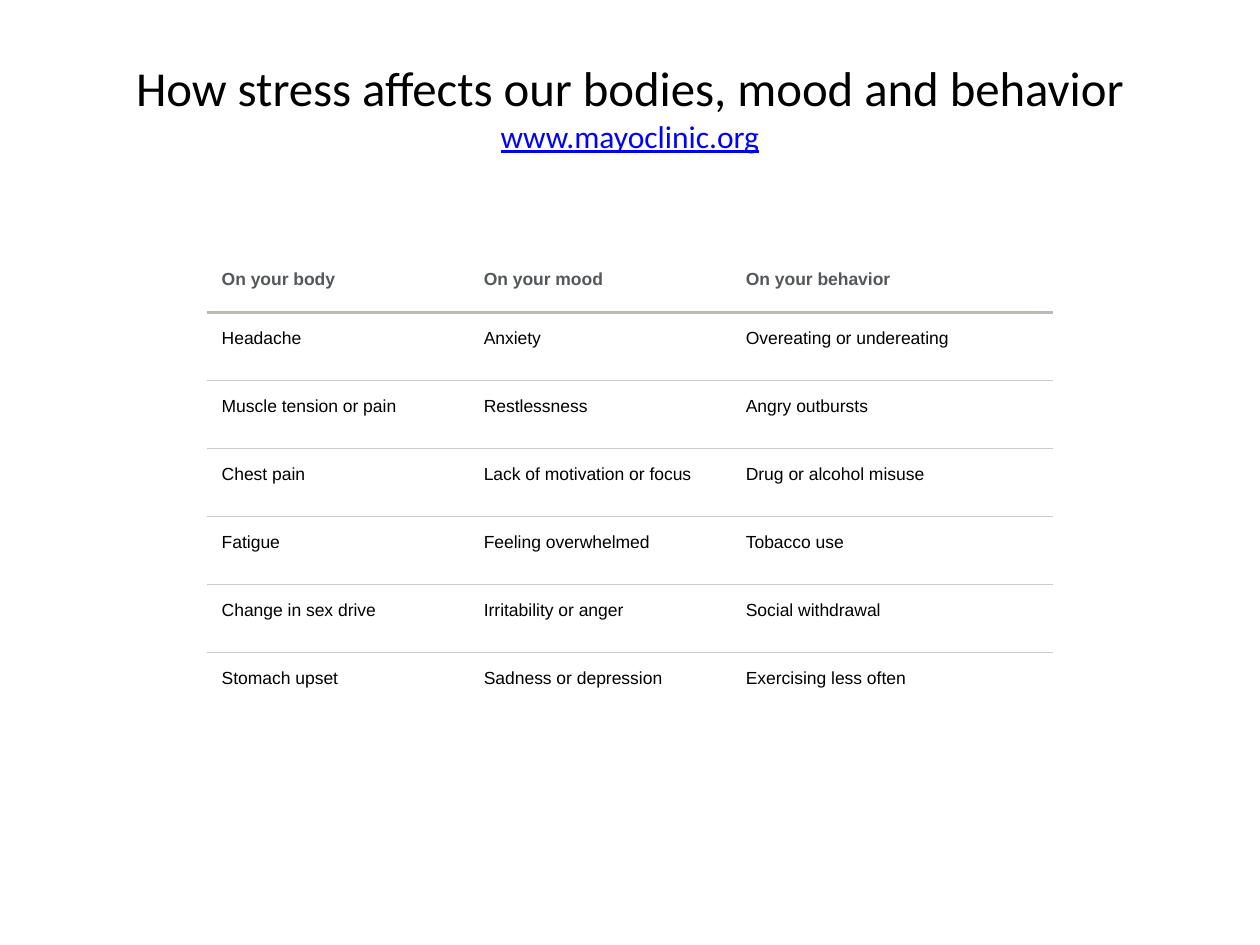
from dataclasses import dataclass

from lxml import etree
from pptx import Presentation
from pptx import util as u
from pptx.dml.color import RGBColor
from pptx.enum import text
from pptx.oxml.ns import qn


@dataclass(frozen=True)
class Theme:
    title: dict
    link: dict
    head: dict
    body: dict
    head_rule: tuple = ("BABBB1", 2.25)
    row_rule: tuple = ("CCCCCC", 1)
    paper: str = "FFFFFF"


THEME = Theme(
    title=dict(name="Calibri", size=27.9, color="000000"),
    link=dict(name="Calibri", size=18, color="0000FF", underline=True),
    head=dict(name="Arial", size=10, color="54585A", bold=True),
    body=dict(name="Arial", size=10, color="000000", bold=False),
)

HEADING = [("How stress affects our bodies, mood and behavior", THEME.title),
           ("www.mayoclinic.org", THEME.link)]
EFFECTS = [
    ("On your body", "On your mood", "On your behavior"),
    ("Headache", "Anxiety", "Overeating or undereating"),
    ("Muscle tension or pain", "Restlessness", "Angry outbursts"),
    ("Chest pain", "Lack of motivation or focus", "Drug or alcohol misuse"),
    ("Fatigue", "Feeling overwhelmed", "Tobacco use"),
    ("Change in sex drive", "Irritability or anger", "Social withdrawal"),
    ("Stomach upset", "Sadness or depression", "Exercising less often"),
]
COLUMN_WIDTHS = (2.08, 2.08, 2.56)


def write(p, words, style):
    r = p.add_run()
    r.text = words
    for key, value in style.items():
        if key == "color":
            r.font.color.rgb = RGBColor.from_string(value)
        else:
            setattr(r.font, key, u.Pt(value) if key == "size" else value)


def set_borders(cell, **rules):
    """Draw the given sides as (colour, points); clear the others."""
    tc_pr = cell._tc.get_or_add_tcPr()
    for i, side in enumerate(("lnL", "lnR", "lnT", "lnB")):
        ln = etree.Element(qn(f"a:{side}"))
        rule = rules.get(side)
        if rule:
            ln.set("w", str(int(u.Pt(rule[1]))))
            fill = etree.SubElement(ln, qn("a:solidFill"))
            etree.SubElement(fill, qn("a:srgbClr"), val=rule[0])
        else:
            etree.SubElement(ln, qn("a:noFill"))
        tc_pr.insert(i, ln)


def add_heading(s, left, top, width, height):
    tf = s.shapes.add_textbox(*map(u.Inches, (left, top, width, height))).text_frame
    for key, value in dict(word_wrap=True, margin_top=u.Inches(0.16),
                           vertical_anchor=text.MSO_ANCHOR.TOP).items():
        setattr(tf, key, value)
    for i, (words, style) in enumerate(HEADING):
        p = tf.add_paragraph() if i else tf.paragraphs[0]
        p.alignment = text.PP_ALIGN.CENTER
        write(p, words, style)


def add_effects_table(s, left, top, width, height):
    rows, cols = len(EFFECTS), len(COLUMN_WIDTHS)
    table = s.shapes.add_table(
        rows, cols, *map(u.Inches, (left, top, width, height))).table
    table.first_row = table.horz_banding = False
    for column, share in zip(table.columns, COLUMN_WIDTHS):
        column.width = u.Inches(width * share / sum(COLUMN_WIDTHS))

    # A rule below each row but the last, heavier under the header
    rules = [None, THEME.head_rule] + [THEME.row_rule] * (rows - 2) + [None]
    for i, entries in enumerate(EFFECTS):
        header = i == 0
        for j, words in enumerate(entries):
            cell = table.cell(i, j)
            for side in ("left", "right", "top", "bottom"):
                setattr(cell, f"margin_{side}", u.Inches(0.12))
            cell.vertical_anchor = (text.MSO_ANCHOR.MIDDLE if header
                                    else text.MSO_ANCHOR.TOP)
            if header:
                cell.fill.solid()
                cell.fill.fore_color.rgb = RGBColor.from_string(THEME.paper)
            else:
                cell.fill.background()
            set_borders(cell, lnT=rules[i], lnB=rules[i + 1])
            p = cell.text_frame.paragraphs[0]
            p.line_spacing = 1.07
            write(p, words, THEME.head if header else THEME.body)


def main():
    prs = Presentation()
    prs.slide_width, prs.slide_height = u.Inches(10), u.Inches(7.5)
    s = prs.slides.add_slide(prs.slide_layouts[6])
    add_heading(s, 0.5, 0.3, 9, 1.25)
    add_effects_table(s, 1.64, 1.94, 6.72, 3.78)
    prs.save("out.pptx")


if __name__ == "__main__":
    main()
